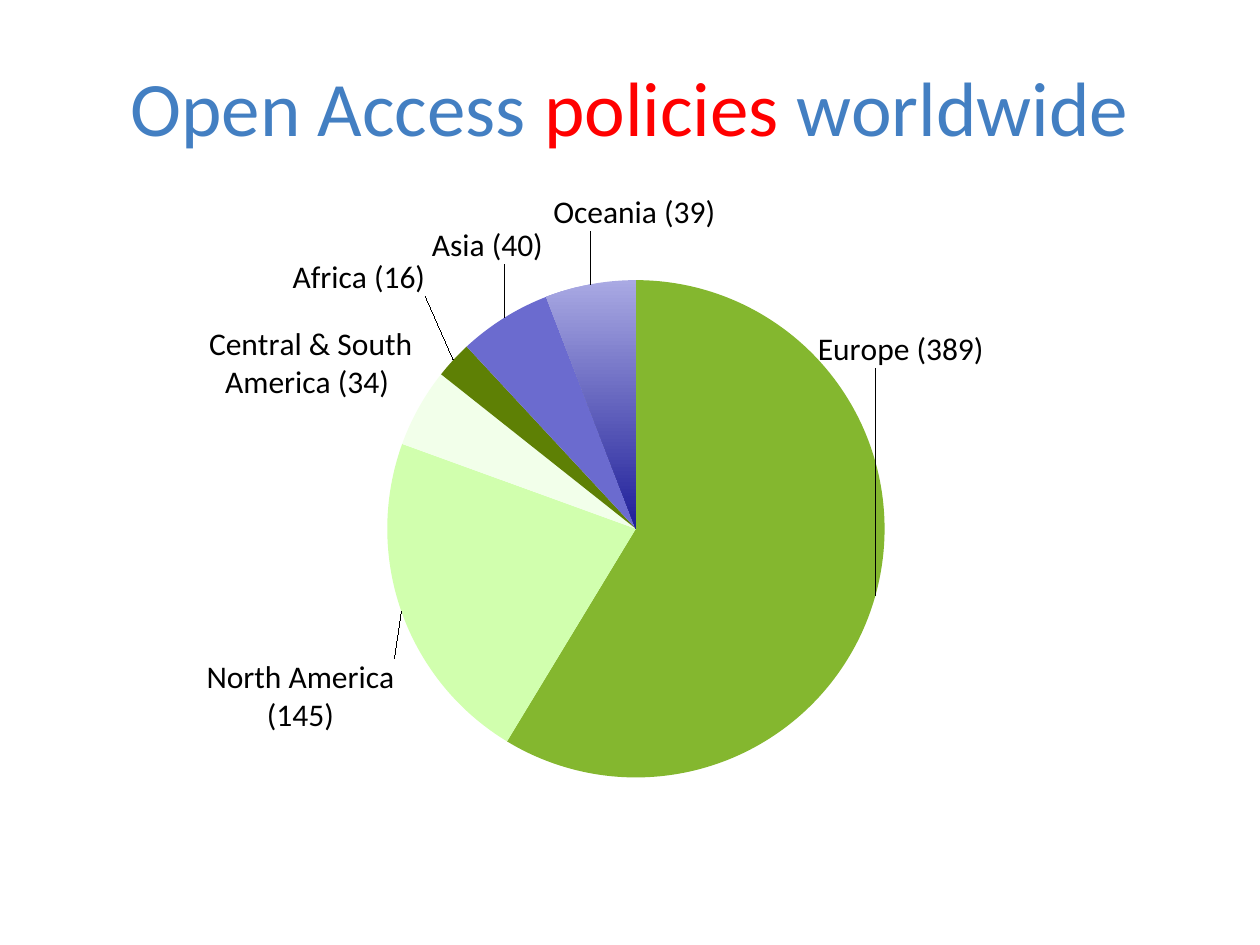
from pptx import Presentation
from pptx.chart.data import CategoryChartData
from pptx.dml.color import RGBColor
from pptx.enum.chart import XL_CHART_TYPE, XL_LABEL_POSITION
from pptx.enum.text import MSO_ANCHOR, PP_ALIGN
from pptx.oxml import parse_xml
from pptx.oxml.ns import nsdecls
from pptx.util import Pt

PIE = XL_CHART_TYPE.PIE
OUTER = XL_LABEL_POSITION.OUTSIDE_END
MIDDLE = MSO_ANCHOR.MIDDLE
CENTER = PP_ALIGN.CENTER

BLUE = RGBColor(0x43, 0x7F, 0xC2)
RED = RGBColor(0xFF, 0x00, 0x00)
BLACK = RGBColor(0x00, 0x00, 0x00)
GREEN = RGBColor(0x84, 0xB7, 0x2F)
LIME = RGBColor(0xD1, 0xFF, 0xAE)
MINT = RGBColor(0xF2, 0xFF, 0xEA)
OLIVE = RGBColor(0x5E, 0x80, 0x05)
VIOLET = RGBColor(0x6B, 0x6B, 0xCF)
LILAC = RGBColor(0xA9, 0xA9, 0xE3)
NAVY = RGBColor(0x1F, 0x1F, 0x99)

TITLE = [("Open Access ", BLUE), ("policies", RED), (" worldwide", BLUE)]
REGIONS = [
    ("Europe (389)", 389, [GREEN], (-37, -152.8)),
    ("North America (145)", 145, [LIME], (0, 25.4)),
    ("Central & South America (34) ", 34, [MINT], (0, -1.7)),
    ("Africa (16)", 16, [OLIVE], (-13, -33.7)),
    ("Asia (40)", 40, [VIOLET], (24.5, -27.1)),
    ("Oceania (39)", 39, [LILAC, NAVY], (72.3, -26)),
]


def place(tags, **sides):
    """Return a manual chart layout."""
    parts = tags + "".join(f'<c:{key} val="{val}"/>' for key, val in sides.items())
    return parse_xml(
        f"<c:layout {nsdecls('c')}><c:manualLayout>{parts}</c:manualLayout></c:layout>"
    )


class Deck:
    """Hold the style and the current slide."""

    def __init__(self):
        self.show = Presentation()
        self.show.slide_width, self.show.slide_height = Pt(720), Pt(540)
        self.slide = self.show.slides.add_slide(self.show.slide_layouts[6])
        self.face, self.base = "Calibri", "Arial"

    def style(self, font, face, size, color):
        font.name, font.size = face, Pt(size)
        font.color.rgb = color

    def title(self, runs, box, size):
        frame = self.slide.shapes.add_textbox(*map(Pt, box)).text_frame
        frame.word_wrap = True
        frame.vertical_anchor = MIDDLE
        para = frame.paragraphs[0]
        para.alignment = CENTER
        for text, color in runs:
            run = para.add_run()
            run.text = text
            self.style(run.font, self.face, size, color)

    def paint(self, fill, colors):
        if len(colors) == 1:
            fill.solid()
            fill.fore_color.rgb = colors[0]
            return
        fill.gradient()
        fill.gradient_angle = 270
        for stop, color in zip(fill.gradient_stops, colors):
            stop.color.rgb = color

    def label(self, point, text, size):
        label = point.data_label
        run = label.text_frame.paragraphs[0].add_run()
        run.text = text
        self.style(run.font, self.face, size, BLACK)
        label.position = OUTER

    def pie(self, regions, box, size):
        data = CategoryChartData()
        data.categories = [str(num) for num in range(1, len(regions) + 1)]
        data.add_series("Series 1", [count for _, count, _, _ in regions])
        chart = self.slide.shapes.add_chart(PIE, *map(Pt, box), data).chart
        chart.has_title = chart.has_legend = False
        self.style(chart.font, self.base, size, BLACK)
        plot = chart.plots[0]
        plot.vary_by_categories = True
        series = plot.series[0]
        series.data_labels.show_value = True
        for index, (text, _, colors, _) in enumerate(regions):
            point = series.points[index]
            self.paint(point.format.fill, colors)
            self.label(point, text, size)
        wide, high = box[2:]
        for node, region in zip(chart.element.xpath(".//c:dLbl"), regions):
            left, top = region[3]
            node.insert(1, place("", x=left / wide, y=top / high))
        area = chart.element.xpath(".//c:plotArea")[0]
        for node in area.xpath("./c:layout"):
            area.remove(node)
        tags = (
            '<c:layoutTarget val="inner"/><c:xMode val="edge"/><c:yMode val="edge"/>'
        )
        area.insert(0, place(tags, x=0.133, y=0.163, w=0.756, h=0.734))

    def save(self):
        self.show.save("out.pptx")


def main():
    deck = Deck()
    deck.title(TITLE, (53.75, 34.2, 612, 52.5), 44)
    deck.pie(REGIONS, (14.4, 97, 683, 387.2), 18)
    deck.save()


if __name__ == "__main__":
    main()
